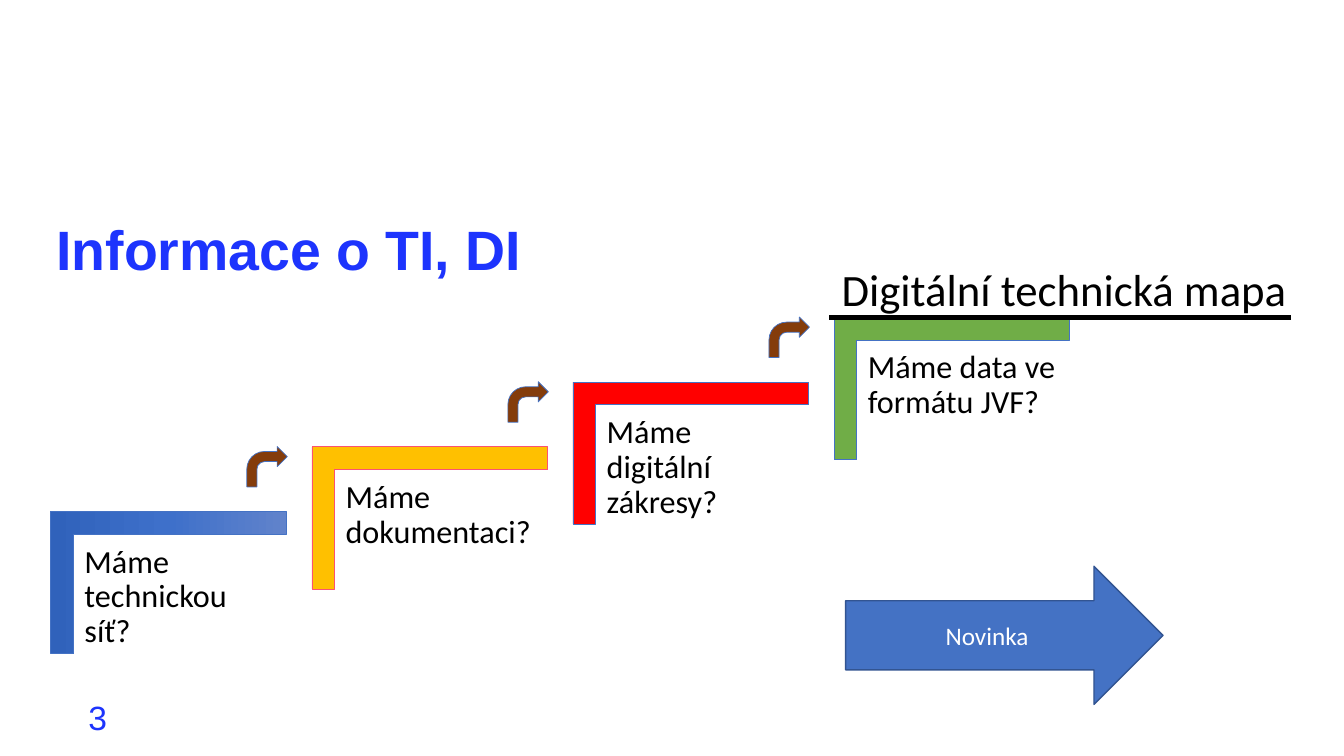
import copy

import pptx
import pptx.dml.color
import pptx.enum.shapes
import pptx.enum.text
import pptx.oxml.ns
import pptx.util
from lxml import etree

Cm, Pt = pptx.util.Cm, pptx.util.Pt
RGBColor = pptx.dml.color.RGBColor
MSO_SHAPE = pptx.enum.shapes.MSO_SHAPE
PP_ALIGN = pptx.enum.text.PP_ALIGN
MSO_ANCHOR = pptx.enum.text.MSO_ANCHOR
qn = pptx.oxml.ns.qn

BRIGHT_BLUE = RGBColor(0x1D, 0x34, 0xFD)
BLUE = RGBColor(0x44, 0x72, 0xC4)
DARK_BLUE = RGBColor(0x32, 0x54, 0x91)
BROWN = RGBColor(0x84, 0x3C, 0x0B)
AMBER = RGBColor(0xFF, 0xC0, 0x00)
PINK = RGBColor(0xFB, 0x52, 0x71)
RED = RGBColor(0xFF, 0x00, 0x00)
GREEN = RGBColor(0x70, 0xAD, 0x47)
BLACK = RGBColor(0x00, 0x00, 0x00)
WHITE = RGBColor(0xFF, 0xFF, 0xFF)
BLUE_GRADIENT = (RGBColor(0x61, 0x83, 0xCB), RGBColor(0x3E, 0x70, 0xCA),
                 RGBColor(0x30, 0x62, 0xBB))

TITLE = "Informace o TI, DI"
PAGE_NUMBER = "3"
MAP_LABEL = "Digitální technická mapa"
NEWS = "Novinka"
STEPS = [  # question, fill, outline
    ("Máme technickou síť?", BLUE_GRADIENT, BLUE),
    ("Máme dokumentaci?", AMBER, PINK),
    ("Máme digitální zákresy?", RED, BLUE),
    ("Máme data ve formátu JVF?", GREEN, BLUE),
]

# Boxes of the first step in cm: left, top, width, height
CORNER = (2.46, 11.71, 3.58, 5.94)
QUESTION = (1.88, 13.49, 5.38, 4.7)
BEND = (6.22, 11.25, 1.02, 1.02)
STEP_RUN, STEP_RISE = 6.58, 1.63

TITLE_FONT = {"name": "Arial", "size": Pt(39.6), "bold": True}
NUMBER_FONT = {"name": "Arial", "size": Pt(24)}
QUESTION_FONT = {"name": "Calibri", "size": Pt(23)}
NEWS_FONT = {"name": "Calibri", "size": Pt(18)}
MAP_FONT = {"name": "Calibri", "size": Pt(32)}


def write(shape, text, font, color, anchor=MSO_ANCHOR.TOP, align=PP_ALIGN.LEFT):
    frame = shape.text_frame
    frame.word_wrap = True
    frame.vertical_anchor = anchor
    paragraph = frame.paragraphs[0]
    paragraph.alignment = align
    run = paragraph.add_run()
    run.text = text
    for key, value in font.items():
        setattr(run.font, key, value)
    run.font.color.rgb = color
    return frame


def add_text(slide, box, *content, **layout):
    return write(slide.shapes.add_textbox(*map(Cm, box)), *content, **layout)


def add_figure(slide, kind, box, fill, outline, width):
    figure = slide.shapes.add_shape(kind, *map(Cm, box))
    figure.shadow.inherit = False
    if isinstance(fill, tuple) and not isinstance(fill, RGBColor):
        fill_gradient(figure, fill)
    else:
        figure.fill.solid()
        figure.fill.fore_color.rgb = fill
    figure.line.color.rgb = outline
    figure.line.width = Pt(width)
    return figure


def fill_gradient(figure, colors):
    """Fill from top to bottom with three evenly spaced colours."""
    figure.fill.gradient()
    figure.fill.gradient_angle = 270
    stop_list = figure.element.spPr.find(".//" + qn("a:gsLst"))
    stop_list.insert(1, copy.deepcopy(stop_list[0]))
    for index, (stop, color) in enumerate(zip(figure.fill.gradient_stops, colors)):
        stop.position = index / 2
        stop.color.rgb = color


def add_corner(slide, box, fill, outline):
    """Add a "corner" preset, which MSO_SHAPE lacks, by way of a half frame."""
    corner = add_figure(slide, MSO_SHAPE.HALF_FRAME, box, fill, outline, 0.5)
    corner.rotation = 90
    for side in range(2):
        corner.adjustments[side] = 0.16
    corner.element.spPr.find(qn("a:prstGeom")).set("prst", "corner")


def add_step(slide, index, question, fill, outline):
    def place(box):
        left, top, *size = box
        return left + index * STEP_RUN, top - index * STEP_RISE, *size

    add_corner(slide, place(CORNER), fill, outline)
    frame = add_text(slide, place(QUESTION), question, QUESTION_FONT, BLACK)
    for side in ("left", "top", "right", "bottom"):
        setattr(frame, f"margin_{side}", Cm(0.25))
    frame.paragraphs[0].line_spacing = 0.9
    if index < len(STEPS) - 1:
        add_figure(slide, MSO_SHAPE.BENT_ARROW, place(BEND), BROWN, BLUE, 0.5)


def main():
    deck = pptx.Presentation()
    deck.slide_width, deck.slide_height = Cm(33.87), Cm(19.05)
    slide = deck.slides.add_slide(deck.slide_layouts[5])

    title = slide.shapes.title
    title.left, title.top, title.width, title.height = map(Cm, (1.17, 5.44, 30.38, 1.85))
    frame = write(title, TITLE, TITLE_FONT, BRIGHT_BLUE, MSO_ANCHOR.MIDDLE)
    frame.auto_size = pptx.enum.text.MSO_AUTO_SIZE.NONE
    frame.paragraphs[0].line_spacing = 0.9

    add_text(slide, (1.98, 17.55, 7.62, 1.02), PAGE_NUMBER, NUMBER_FONT,
             BRIGHT_BLUE, anchor=MSO_ANCHOR.MIDDLE)

    for index, step in enumerate(STEPS):
        add_step(slide, index, *step)

    news = add_figure(slide, MSO_SHAPE.RIGHT_ARROW, (21.31, 14.27, 8, 3.48),
                      BLUE, DARK_BLUE, 1)
    write(news, NEWS, NEWS_FONT, WHITE, MSO_ANCHOR.MIDDLE, PP_ALIGN.CENTER)

    underline = slide.shapes.add_connector(
        pptx.enum.shapes.MSO_CONNECTOR.STRAIGHT, *map(Cm, (32.54, 8, 20.88, 8)))
    underline.line.color.rgb = BLACK
    underline.line.width = Pt(3)
    etree.SubElement(underline.element.spPr, qn("a:effectLst"))
    add_text(slide, (20.96, 6.48, 12.52, 1.63), MAP_LABEL, MAP_FONT, BLACK)

    deck.save("out.pptx")


if __name__ == "__main__":
    main()
